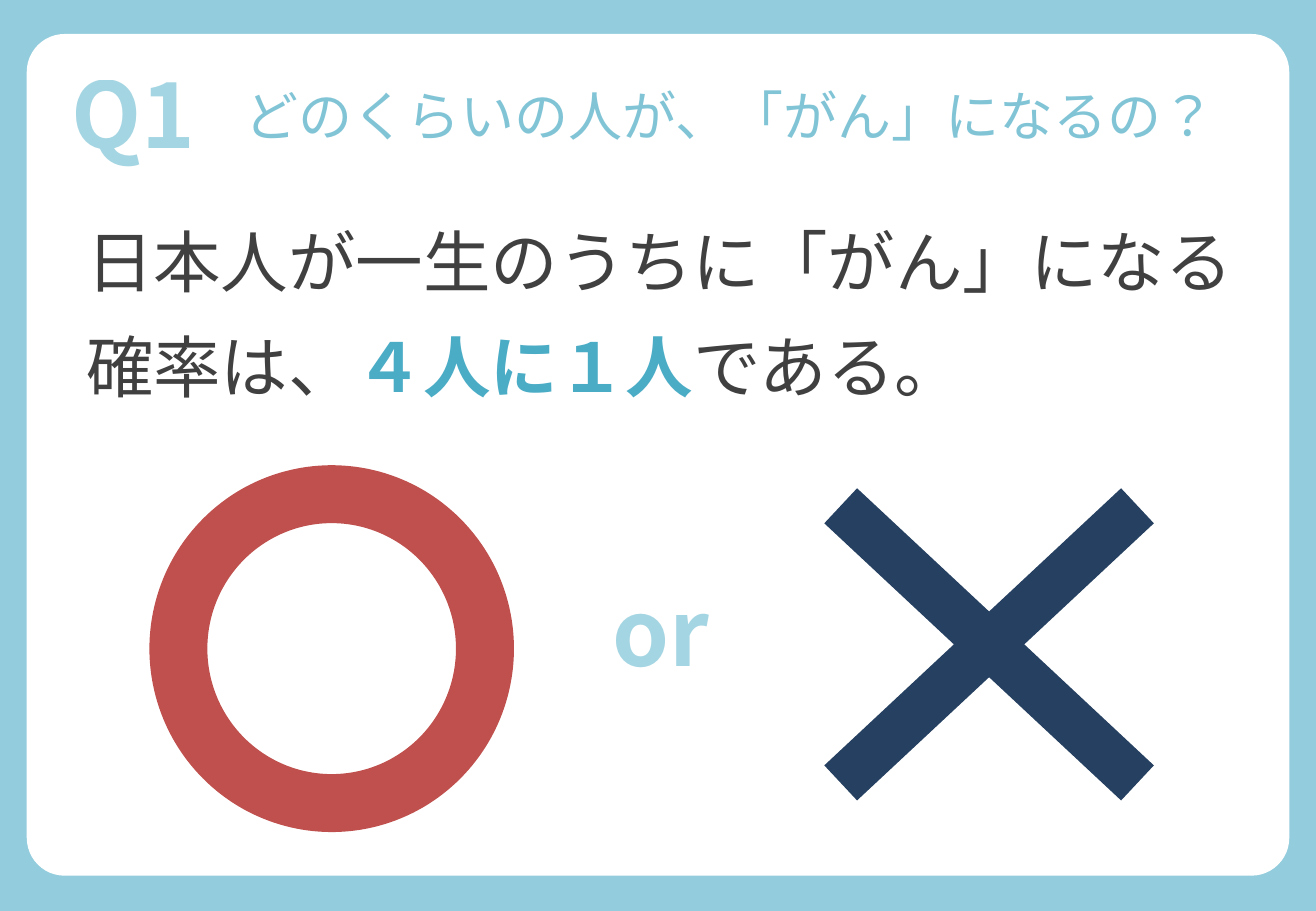
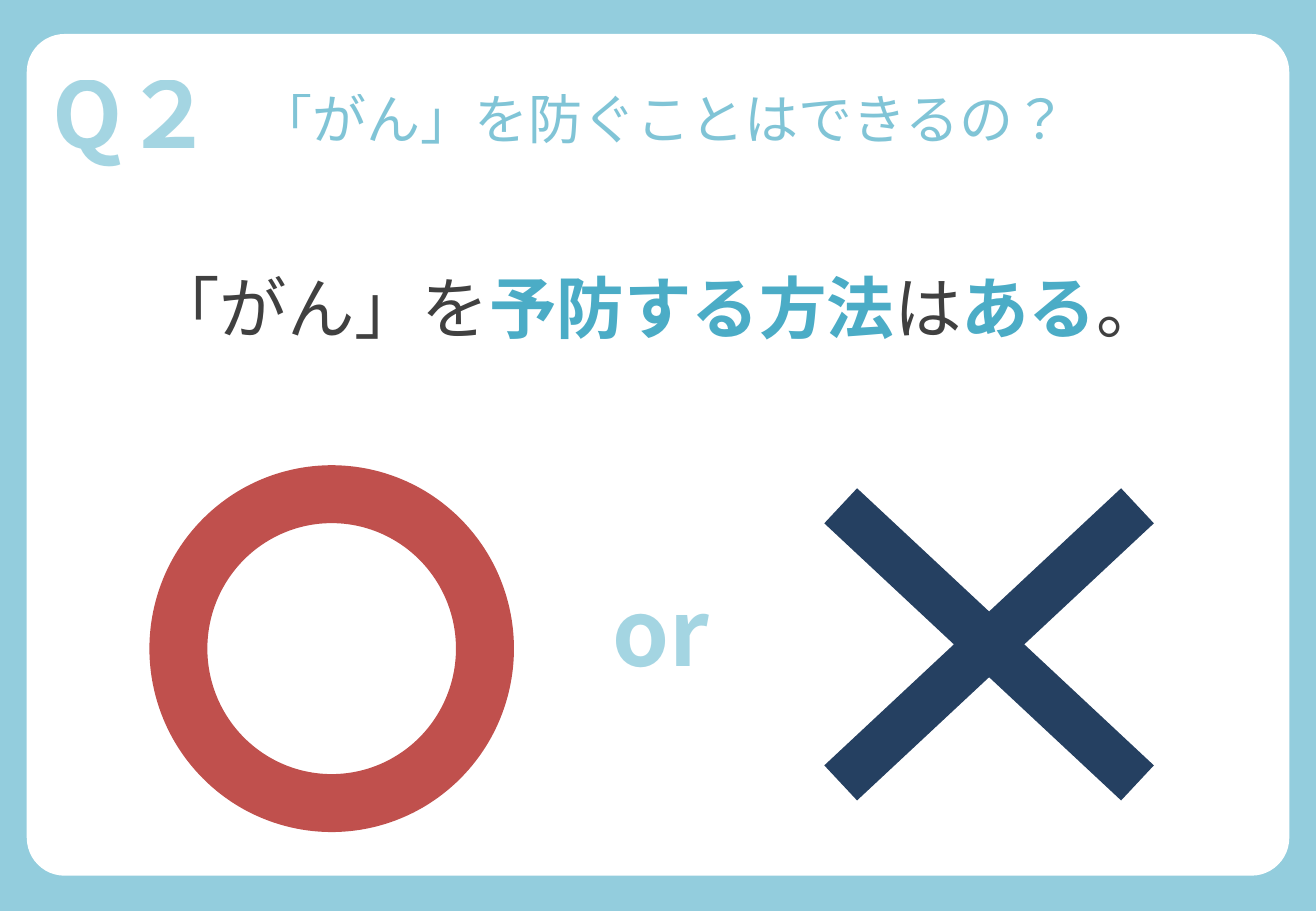
import pptx
import pptx.util
import pptx.dml.color
import pptx.enum.shapes
import pptx.enum.text
import pptx.oxml
import pptx.oxml.ns

PX = 9144
FONT = "Noto Sans CJK JP"
INK = {"sky": "93CDDD", "white": "FFFFFF", "text": "404040",
       "teal": "4BACC6", "red": "C0504D", "navy": "254061"}
FORM = pptx.enum.shapes.MSO_SHAPE
ALIGN = pptx.enum.text.PP_ALIGN
LOOK = {
    "num": {"size": 54, "bold": True, "ink": "teal", "alpha": 50},
    "head": {"size": 32, "bold": False, "ink": "teal", "alpha": 70},
    "body": {"size": 40, "bold": False, "ink": "text", "alpha": 100},
    "key": {"size": 40, "bold": True, "ink": "teal", "alpha": 100},
}


def tint(name):
    return pptx.dml.color.RGBColor.from_string(INK[name])


class Deck:
    def __init__(self, wide, high):
        self.prs = pptx.Presentation()
        self.prs.slide_width = wide * PX
        self.prs.slide_height = high * PX
        self.slide = None

    def page(self):
        self.slide = self.prs.slides.add_slide(self.prs.slide_layouts[6])
        fill = self.slide.background.fill
        fill.solid()
        fill.fore_color.rgb = tint("sky")

    def shape(self, form, box, ink, bend):
        shape = self.slide.shapes.add_shape(form, *(n * PX for n in box))
        shape.shadow.inherit = False
        shape.adjustments[0] = bend
        shape.fill.solid()
        shape.fill.fore_color.rgb = tint(ink)
        shape.line.fill.background()

    def run(self, para, text, look):
        style = LOOK[look]
        run = para.add_run()
        run.text = text
        form = {"name": FONT, "size": pptx.util.Pt(style["size"]), "bold": style["bold"]}
        for key, value in form.items():
            setattr(run.font, key, value)
        run.font.color.rgb = tint(style["ink"])
        props = run.font._element
        props.set("lang", "ja-JP")
        if style["alpha"] < 100:
            color = props.find(".//" + pptx.oxml.ns.qn("a:srgbClr"))
            alpha = pptx.oxml.ns.qn("a:alpha")
            color.append(color.makeelement(alpha, {"val": str(style["alpha"] * 1000)}))
        latin = props.find(pptx.oxml.ns.qn("a:latin"))
        latin.addnext(latin.makeelement(pptx.oxml.ns.qn("a:ea"), {"typeface": FONT}))

    def text(self, box, lines, align=ALIGN.LEFT, space=1.0):
        frame = self.slide.shapes.add_textbox(*(n * PX for n in box)).text_frame
        form = {"word_wrap": True, "vertical_anchor": pptx.enum.text.MSO_ANCHOR.MIDDLE}
        for key, value in form.items():
            setattr(frame, key, value)
        for i, line in enumerate(lines):
            para = frame.add_paragraph() if i else frame.paragraphs[0]
            para.alignment = align
            para.line_spacing = space
            for text, look in line:
                self.run(para, text, look)

    def quiz(self, num, head, place, lines, box, align):
        self.page()
        self.shape(FORM.ROUNDED_RECTANGLE, (22, 28, 1039, 693), "white", 0.045)
        self.shape(FORM.DONUT, (123, 383, 300, 302), "red", 0.159)
        self.shape(FORM.MATH_MULTIPLY, (579, 311, 470, 439), "navy", 0.09)
        self.text((434, 446, 220, 145), [[("or", "num")]], ALIGN.CENTER)
        self.text((25, 40, 170, 105), [[(num, "num")]], ALIGN.CENTER)
        self.text(place, [[(head, "head")]])
        self.text(box, lines, align, 1.3)


def main():
    deck = Deck(1083, 750)
    deck.quiz("Q1", "どのくらいの人が、「がん」になるの？", (191, 53, 831, 83),
              [[("日本人が一生のうちに「がん」になる", "body")],
               [("確率は、", "body"), ("４人に１人", "key"), ("である。", "body")]],
              (61, 131, 969, 234), ALIGN.LEFT)
    deck.quiz("Q２", "「がん」を防ぐことはできるの？", (203, 56, 748, 83),
              [[("「がん」を", "body"), ("予防する方法", "key"), ("は", "body"),
                ("ある", "key"), ("。", "body")]],
              (22, 181, 1039, 122), ALIGN.CENTER)
    deck.prs.save("out.pptx")


if __name__ == "__main__":
    main()
